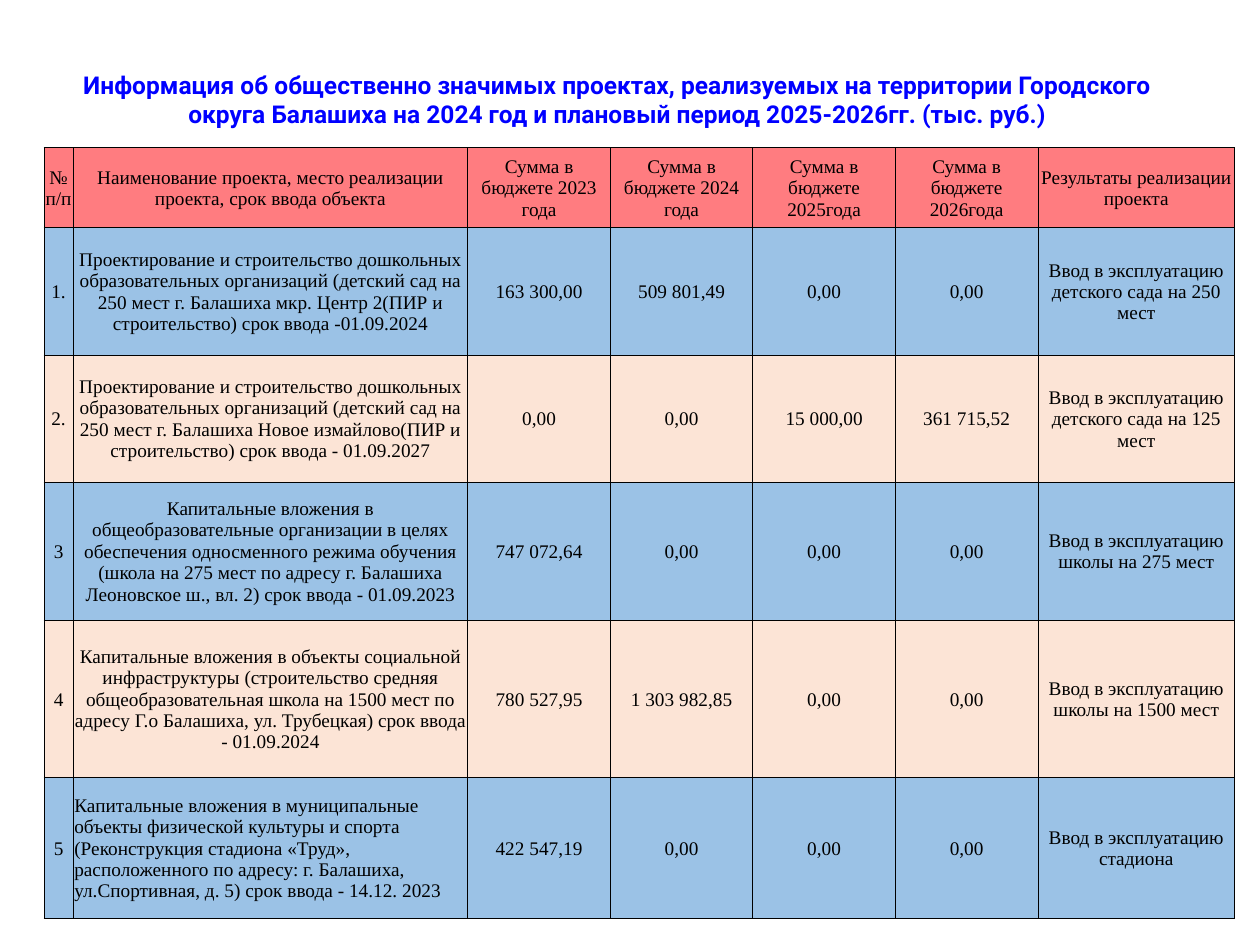
import pptx
import pptx.dml.color
import pptx.enum.text
import pptx.oxml
import pptx.oxml.ns
import pptx.util

COLORS = {
    "title": "0000FF",
    "text": "000000",
    "border": "000000",
    "header": "FF7C80",
    "odd": "9BC2E6",
    "even": "FCE4D6",
}
SLIDE_WIDTH = pptx.util.Inches(10)
SLIDE_HEIGHT = pptx.util.Inches(7.5)
INSET = pptx.util.Inches(0.01)
COLUMN_SHARES = [0.23, 3.13, 1.13, 1.13, 1.13, 1.13, 1.56]
ROW_SHARES = [0.64, 1.01, 1.01, 1.1, 1.25, 1.12]

TITLE = (
    "Информация об общественно значимых проектах, реализуемых на территории "
    "Городского округа Балашиха на 2024 год и плановый период 2025-2026гг. (тыс. руб.)"
)
HEADER = [
    "№ п/п",
    "Наименование проекта, место реализации проекта, срок ввода объекта",
    "Сумма в бюджете 2023 года",
    "Сумма в бюджете 2024 года",
    "Сумма в бюджете 2025года",
    "Сумма в бюджете 2026года",
    "Результаты реализации проекта",
]
PROJECTS = [
    ["1.",
     "Проектирование и строительство дошкольных образовательных организаций "
     "(детский сад на 250 мест г. Балашиха мкр. Центр 2(ПИР и строительство) "
     "срок ввода -01.09.2024",
     "163 300,00", "509 801,49", "0,00", "0,00",
     "Ввод в эксплуатацию детского сада на 250 мест"],
    ["2.",
     "Проектирование и строительство дошкольных образовательных организаций "
     "(детский сад на 250 мест г. Балашиха Новое измайлово(ПИР и строительство) "
     "срок ввода - 01.09.2027",
     "0,00", "0,00", "15 000,00", "361 715,52",
     "Ввод в эксплуатацию детского сада на 125 мест"],
    ["3",
     "Капитальные вложения в общеобразовательные организации в целях обеспечения "
     "односменного режима обучения (школа на 275 мест по адресу г. Балашиха "
     "Леоновское ш., вл. 2) срок ввода - 01.09.2023",
     "747 072,64", "0,00", "0,00", "0,00",
     "Ввод в эксплуатацию школы на 275 мест"],
    ["4",
     "Капитальные вложения в объекты социальной инфраструктуры (строительство "
     "средняя общеобразовательная школа на 1500 мест по адресу Г.о Балашиха, "
     "ул. Трубецкая) срок ввода - 01.09.2024",
     "780 527,95", "1 303 982,85", "0,00", "0,00",
     "Ввод в эксплуатацию школы на 1500 мест"],
    ["5",
     "Капитальные вложения в муниципальные объекты физической культуры и спорта "
     "(Реконструкция стадиона «Труд», расположенного по адресу: г. Балашиха, "
     "ул.Спортивная, д. 5) срок ввода - 14.12. 2023",
     "422 547,19", "0,00", "0,00", "0,00",
     "Ввод в эксплуатацию стадиона"],
]


def share_box(left, top, width, height):
    return (int(SLIDE_WIDTH * left), int(SLIDE_HEIGHT * top),
            int(SLIDE_WIDTH * width), int(SLIDE_HEIGHT * height))


def split(length, shares):
    return [int(length * share / sum(shares)) for share in shares]


def style_paragraph(paragraph, font_name, size, color, bold=False, centered=True):
    alignment = pptx.enum.text.PP_ALIGN
    paragraph.alignment = alignment.CENTER if centered else alignment.LEFT
    paragraph.font.name = font_name
    paragraph.font.size = pptx.util.Pt(size)
    paragraph.font.bold = bold
    paragraph.font.color.rgb = pptx.dml.color.RGBColor.from_string(COLORS[color])


def add_borders(cell):
    properties = cell._tc.get_or_add_tcPr()
    for side in ("lnL", "lnR", "lnT", "lnB"):
        properties.append(pptx.oxml.parse_xml(
            f'<a:{side} {pptx.oxml.ns.nsdecls("a")} w="{pptx.util.Pt(0.5)}">'
            f'<a:solidFill><a:srgbClr val="{COLORS["border"]}"/></a:solidFill>'
            f'</a:{side}>'))


def fill_cell(cell, text, fill, centered):
    cell.margin_left = cell.margin_top = cell.margin_right = INSET
    cell.margin_bottom = 0
    cell.vertical_anchor = pptx.enum.text.MSO_ANCHOR.MIDDLE
    add_borders(cell)
    cell.fill.solid()
    cell.fill.fore_color.rgb = pptx.dml.color.RGBColor.from_string(COLORS[fill])
    cell.text = text
    style_paragraph(cell.text_frame.paragraphs[0], "Times New Roman", 11, "text",
                    centered=centered)


def add_title(slide, box):
    frame = slide.shapes.add_textbox(*box).text_frame
    frame.word_wrap = True
    frame.vertical_anchor = pptx.enum.text.MSO_ANCHOR.MIDDLE
    frame.text = TITLE
    style_paragraph(frame.paragraphs[0], "Roboto", 14, "title", bold=True)


def add_project_table(slide, box):
    rows = [HEADER] + PROJECTS
    table = slide.shapes.add_table(len(rows), len(HEADER), *box).table
    for column, width in zip(table.columns, split(box[2], COLUMN_SHARES)):
        column.width = width
    for row, height in zip(table.rows, split(box[3], ROW_SHARES)):
        row.height = height
    for row_index, texts in enumerate(rows):
        fill = "header" if row_index == 0 else ("even", "odd")[row_index % 2]
        for column_index, text in enumerate(texts):
            last_name = row_index == len(PROJECTS) and column_index == 1
            fill_cell(table.cell(row_index, column_index), text, fill, not last_name)


def main():
    presentation = pptx.Presentation()
    presentation.slide_width = SLIDE_WIDTH
    presentation.slide_height = SLIDE_HEIGHT
    slide = presentation.slides.add_slide(presentation.slide_layouts[6])
    add_title(slide, share_box(0.04, 0.05, 0.9, 0.11))
    add_project_table(slide, share_box(0.035, 0.156, 0.945, 0.816))
    presentation.save("out.pptx")


if __name__ == "__main__":
    main()
